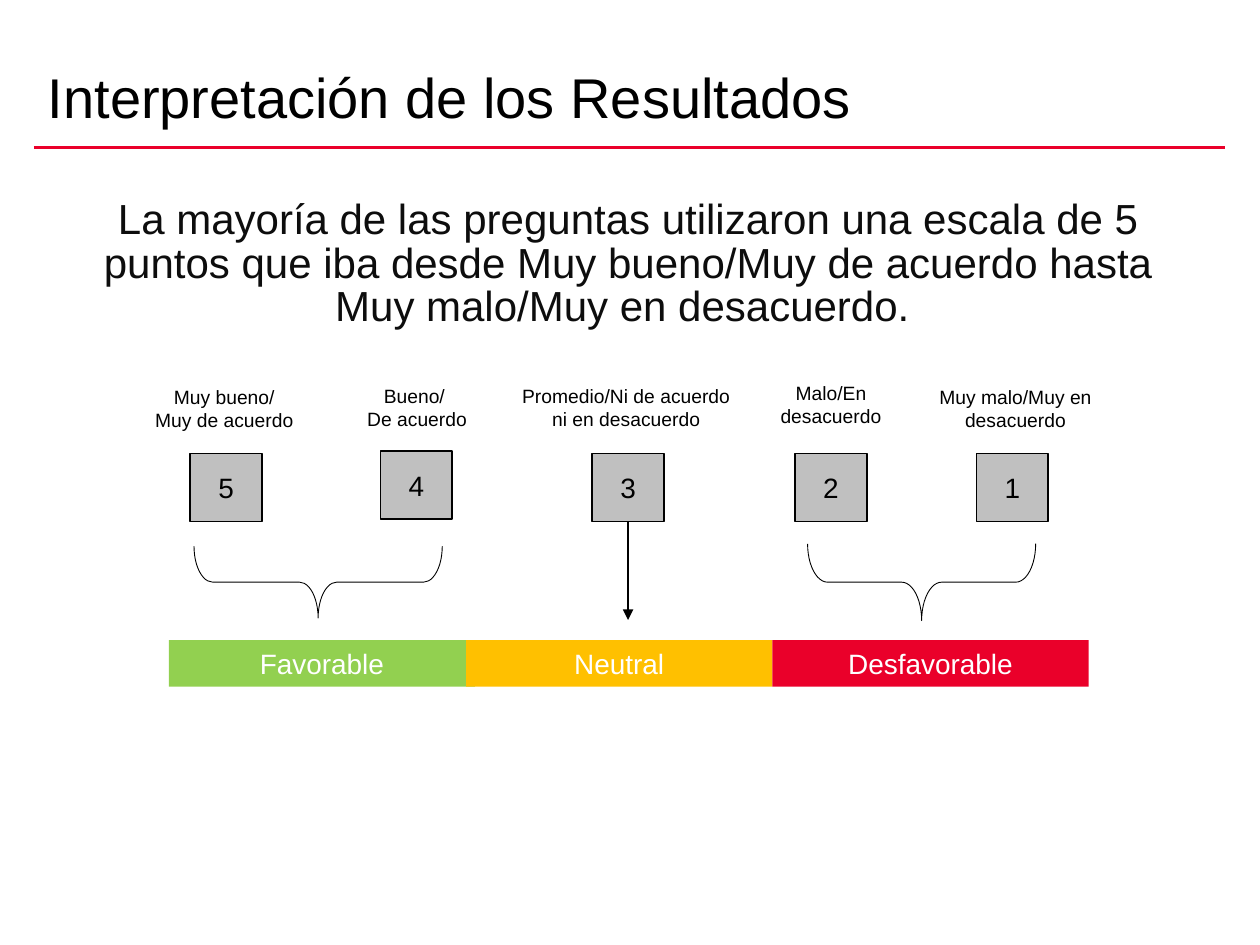
from lxml.etree import SubElement
from pptx import Presentation
from pptx.dml.color import RGBColor
from pptx.enum.shapes import MSO_CONNECTOR, MSO_SHAPE as Shape
from pptx.enum.text import MSO_ANCHOR as Anchor, MSO_AUTO_SIZE as AutoSize, PP_ALIGN as Align
from pptx.oxml.ns import qn
from pptx.util import Inches, Pt

COLUMNS, ROWS = 100, 75
BLACK, WHITE, RED = "000000", "FFFFFF", "EA002A"


def color(code):
    """Turn a hex string into a colour."""
    return RGBColor.from_string(code)


class ScaleSlide:
    """Holds the style and the slide, measured in columns and rows."""

    font = "Arial"

    def __init__(self, deck):
        """Add a title-only slide to the deck."""
        self.slide = deck.slides.add_slide(deck.slide_layouts[5])
        self.column = deck.slide_width / COLUMNS
        self.row = deck.slide_height / ROWS

    def place(self, left, top, width, height):
        """Convert a grid frame to slide lengths."""
        return (round(left * self.column), round(top * self.row),
                round(width * self.column), round(height * self.row))

    def set_words(self, frame, words, size, ink=BLACK, align=Align.CENTER,
                  anchor=Anchor.MIDDLE, spacing=None):
        """Fill a text frame with styled paragraphs."""
        frame.text = words
        frame.word_wrap = True
        frame.auto_size = AutoSize.NONE
        frame.vertical_anchor = anchor
        for paragraph in frame.paragraphs:
            paragraph.alignment = align
            paragraph.line_spacing = spacing
            paragraph.font.name = self.font
            paragraph.font.size = Pt(size)
            paragraph.font.color.rgb = color(ink)

    def title(self, words, area):
        """Place the title placeholder."""
        heading = self.slide.shapes.title
        heading.left, heading.top, heading.width, heading.height = self.place(*area)
        self.set_words(heading.text_frame, words, 32, align=Align.LEFT,
                       anchor=Anchor.BOTTOM, spacing=0.8)

    def text(self, words, area, size, ink=BLACK, spacing=None):
        """Add a centred text box."""
        box = self.slide.shapes.add_textbox(*self.place(*area))
        self.set_words(box.text_frame, words, size, ink, anchor=Anchor.TOP, spacing=spacing)

    def outline(self, shape, ink, weight):
        """Set the line of a shape, or remove it."""
        if ink is None:
            shape.line.fill.background()
        else:
            shape.line.color.rgb = color(ink)
            shape.line.width = Pt(weight)

    def block(self, words, area, fill, ink, edge=None):
        """Add a filled rectangle with a word or number."""
        block = self.slide.shapes.add_shape(Shape.RECTANGLE, *self.place(*area))
        block.shadow.inherit = False
        block.fill.solid()
        block.fill.fore_color.rgb = color(fill)
        self.outline(block, edge, 1)
        self.set_words(block.text_frame, words, 16, ink)
        return block

    def brace(self, center, middle, span, depth):
        """Add a brace that opens upwards over a span of columns."""
        area = (center - depth / 2, middle - span / 2, depth, span)
        brace = self.slide.shapes.add_shape(Shape.LEFT_BRACE, *self.place(*area))
        brace.rotation = 270
        brace.adjustments[0] = 0.26
        brace.shadow.inherit = False
        brace.fill.background()
        self.outline(brace, BLACK, 0.5)

    def line(self, start, end, ink, weight, source=None):
        """Add a rule, or an arrow that leaves the bottom of a source block."""
        line = self.slide.shapes.add_connector(
            MSO_CONNECTOR.STRAIGHT, *self.place(*start, *end))
        self.outline(line, ink, weight)
        if source is not None:
            line.begin_connect(source, 2)
            SubElement(line.get_or_add_ln(), qn("a:tailEnd"),
                       type="triangle", w="med", len="med")
        SubElement(line.element.spPr, qn("a:effectLst"))


def main():
    """Build the slide and save it."""
    deck = Presentation()
    deck.slide_width, deck.slide_height = Inches(10), Inches(7.5)
    page = ScaleSlide(deck)

    page.line((2.7, 11.7), (97.2, 11.7), RED, 2)
    page.title("Interpretación de los Resultados", (2.8, 0.5, 90, 10.3))
    page.text("La mayoría de las preguntas utilizaron una escala de 5 puntos que iba "
              "desde Muy bueno/Muy de acuerdo hasta Muy malo/Muy en desacuerdo. ",
              (5.8, 15.3, 88.1, 12.8), 24, "0D0D0D", Pt(25))

    scale = [
        ("5", 15.1, 36, "Muy bueno/\nMuy de acuerdo", 11.2, 30.1, 13.2),
        ("4", 30.2, 35.8, "Bueno/ \nDe acuerdo", 27.7, 30, 10.8),
        ("3", 47, 36, "Promedio/Ni de acuerdo ni en desacuerdo", 40.3, 30, 18.8),
        ("2", 63.1, 36, "Malo/En desacuerdo", 60.4, 29.8, 11.1),
        ("1", 77.5, 36, "Muy malo/Muy en desacuerdo", 72.8, 30.1, 15.6),
    ]
    points = {}
    for score, left, top, meaning, label_left, label_top, label_width in scale:
        page.text(meaning, (label_left, label_top, label_width, 4.7), 11)
        points[score] = page.block(score, (left, top, 5.7, 5.4), "C0C0C0", BLACK, BLACK)

    page.line((49.85, 41.4), (49.85, 49.2), BLACK, 1, points["3"])
    page.brace(25.25, 46.2, 19.7, 5.7)
    page.brace(73.15, 46.2, 18.1, 6.1)

    for verdict, left, right, fill in [("Favorable", 13.4, 37.7, "92D050"),
                                       ("Neutral", 37, 61.3, "FFC000"),
                                       ("Desfavorable", 61.3, 86.4, RED)]:
        page.block(verdict, (left, 50.8, right - left, 3.7), fill, WHITE)

    deck.save("out.pptx")


if __name__ == "__main__":
    main()
